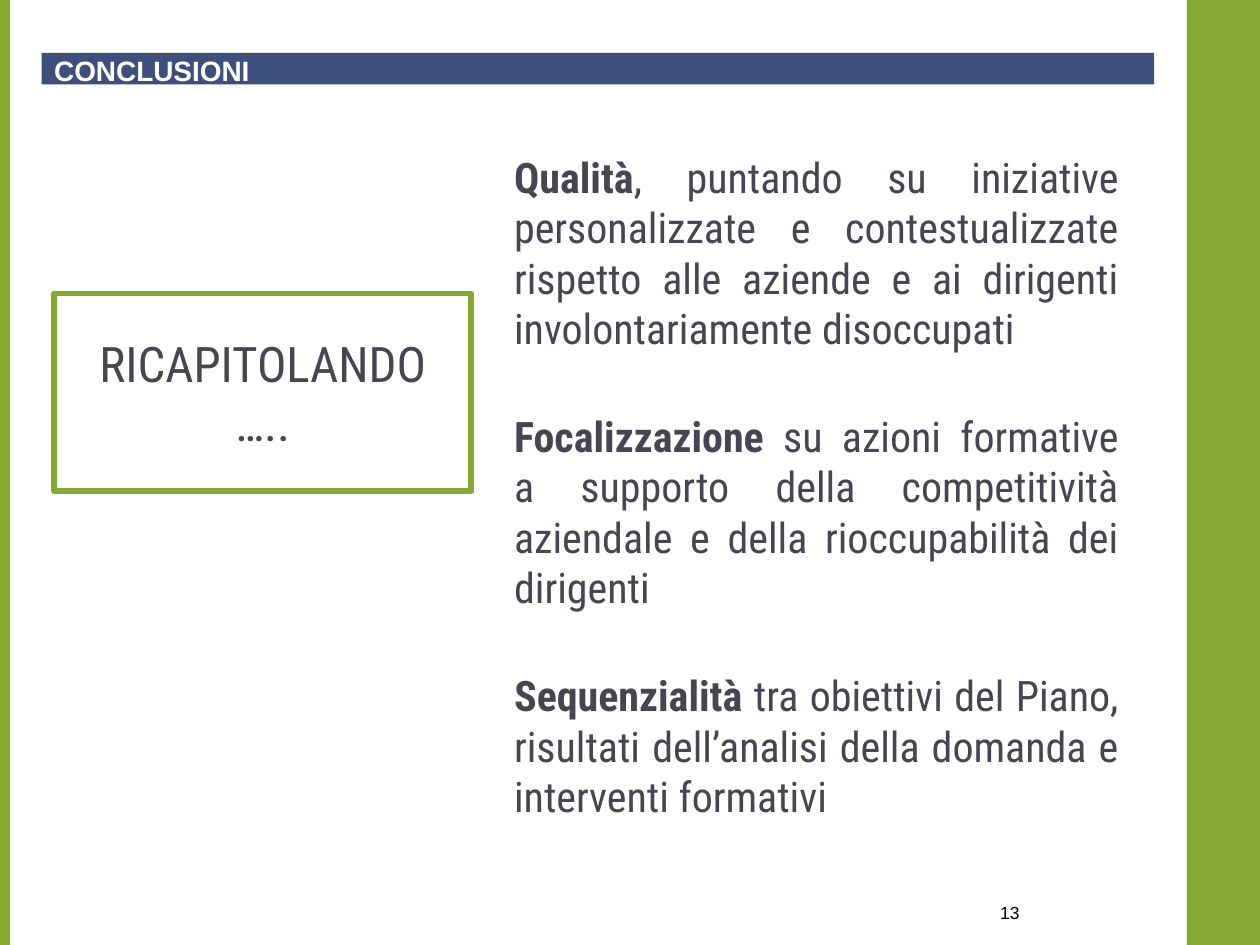
import pptx
import pptx.dml.color
import pptx.enum.shapes
import pptx.enum.text
import pptx.oxml
import pptx.oxml.ns
import pptx.util
from pptx.util import Inches

COLORS = {"green": "84AA33", "blue": "3F4F7C", "text": "464653",
          "white": "FFFFFF", "black": "000000"}
ALIGN = pptx.enum.text.PP_ALIGN
ANCHOR = pptx.enum.text.MSO_ANCHOR

POINTS = [
    ("Qualità", ", puntando su iniziative personalizzate e contestualizzate "
     "rispetto alle aziende e ai dirigenti involontariamente disoccupati"),
    ("Focalizzazione", " su azioni formative a supporto della competitività "
     "aziendale e della rioccupabilità dei dirigenti"),
    ("Sequenzialità", " tra obiettivi del Piano, risultati dell’analisi della "
     "domanda e interventi formativi"),
]


def color(name):
    return pptx.dml.color.RGBColor.from_string(COLORS[name])


def place(shape, left, top, width, height):
    shape.left, shape.top = Inches(left), Inches(top)
    shape.width, shape.height = Inches(width), Inches(height)


def set_font(font, name, size, color_name, bold=False):
    font.name, font.size, font.bold = name, pptx.util.Pt(size), bold
    font.color.rgb = color(color_name)


def set_frame(frame, anchor):
    frame.word_wrap = True
    frame.auto_size = pptx.enum.text.MSO_AUTO_SIZE.NONE
    frame.vertical_anchor = anchor


def write_line(shape, text, align, *font):
    """Fill a shape with one vertically centred paragraph."""
    frame = shape.text_frame
    set_frame(frame, ANCHOR.MIDDLE)
    frame.text = text
    para = frame.paragraphs[0]
    para.alignment = align
    set_font(para.runs[0].font, *font)


def add_rectangle(page, box, fill):
    shape = page.shapes.add_shape(
        pptx.enum.shapes.MSO_SHAPE.RECTANGLE, *map(Inches, box))
    shape.shadow.inherit = False
    shape.fill.solid()
    shape.fill.fore_color.rgb = color(fill)
    shape.line.fill.background()
    return shape


def add_side_bands(page, width, height):
    right_band = 0.58
    add_rectangle(page, (width - right_band, 0, right_band, height), "green")
    add_rectangle(page, (0, 0, 0.08, height), "green")


def fill_heading(title, box):
    place(title, *box)
    title.fill.solid()
    title.fill.fore_color.rgb = color("blue")
    write_line(title, "CONCLUSIONI", ALIGN.LEFT, "Arial", 16, "white", True)
    title.text_frame.margin_top = Inches(0.03)
    title.text_frame.margin_bottom = 0


def add_recap(page, box):
    recap = add_rectangle(page, box, "white")
    recap.line.color.rgb = color("green")
    recap.line.width = pptx.util.Pt(3.35)
    write_line(recap, "RICAPITOLANDO …..", ALIGN.CENTER,
               "Roboto Condensed", 28, "text")


def fill_points(body, box):
    place(body, *box)
    frame = body.text_frame
    set_frame(frame, ANCHOR.TOP)
    for index, (keyword, rest) in enumerate(POINTS):
        para = frame.add_paragraph() if index else frame.paragraphs[0]
        para.alignment = ALIGN.JUSTIFY
        para.space_before = pptx.util.Pt(33 if index else 0)
        properties = para._p.get_or_add_pPr()
        properties.set("marL", "0")
        properties.set("indent", "0")
        properties.append(pptx.oxml.parse_xml(
            f"<a:buNone {pptx.oxml.ns.nsdecls('a')}/>"))
        for text, bold in ((keyword, True), (rest, False)):
            span = para.add_run()
            span.text = text
            set_font(span.font, "Roboto Condensed", 24, "text", bold)


def add_page_number(page, box):
    number = page.shapes.add_textbox(*map(Inches, box))
    write_line(number, "13", ALIGN.RIGHT, "Arial", 10, "black")


def main():
    deck = pptx.Presentation()
    width, height = 10, 7.5
    deck.slide_width, deck.slide_height = Inches(width), Inches(height)
    page = deck.slides.add_slide(deck.slide_layouts[1])
    add_side_bands(page, width, height)
    fill_heading(page.shapes.title, (0.33, 0.42, 8.83, 0.25))
    add_recap(page, (0.43, 2.33, 3.31, 1.57))
    fill_points(page.placeholders[1], (3.98, 1.15, 5, 5.5))
    add_page_number(page, (7.11, 7.08, 1.08, 0.33))
    deck.save("out.pptx")


if __name__ == "__main__":
    main()
